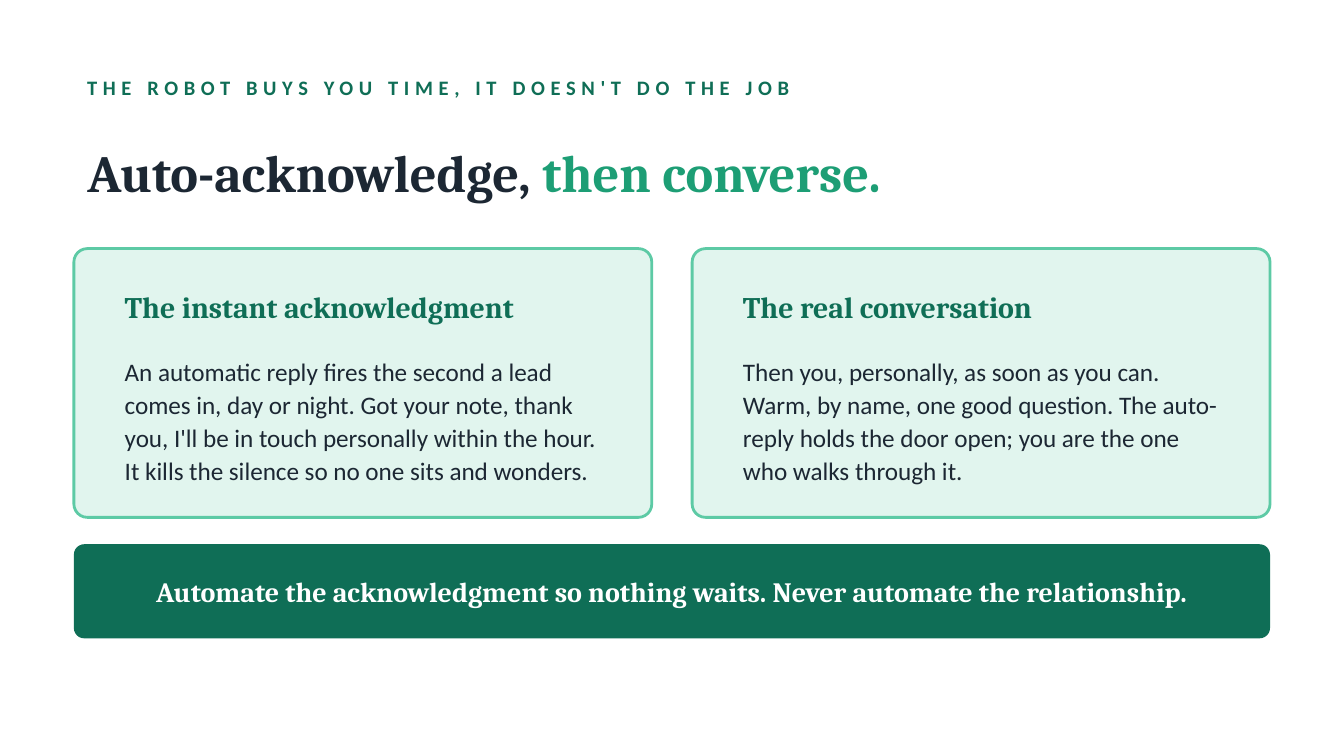
from pptx import Presentation
from pptx.dml.color import RGBColor
from pptx.enum.shapes import MSO_SHAPE
from pptx.enum.text import MSO_ANCHOR, MSO_AUTO_SIZE, PP_ALIGN
from pptx.util import Pt

PX = 4572  # 200 px to the inch
ROUND = MSO_SHAPE.ROUNDED_RECTANGLE
MIDDLE = MSO_ANCHOR.MIDDLE
FIXED = MSO_AUTO_SIZE.NONE
LEFT, CENTER = PP_ALIGN.LEFT, PP_ALIGN.CENTER
HEAD, BODY = "Cambria", "Calibri"
INK, DARK, GREEN = "1C2733", "0F6E56", "1D9E75"
MINT, EDGE, WHITE = "E1F5EE", "5DCAA5", "FFFFFF"


def color(code):
    return RGBColor.from_string(code)


def write(box, parts, font, size, bold=True, align=LEFT):
    """Fill a box with one paragraph of (text, colour) parts."""
    frame = box.text_frame
    frame.word_wrap = True
    frame.auto_size = FIXED
    frame.vertical_anchor = MIDDLE
    para = frame.paragraphs[0]
    para.alignment = align
    for text, code in parts:
        run = para.add_run()
        run.text = text
        run.font.name = font
        run.font.size = Pt(size)
        run.font.bold = bold
        run.font.color.rgb = color(code)
    return para


deck = Presentation()
deck.slide_width, deck.slide_height = 2000 * PX, 1125 * PX
slide = deck.slides.add_slide(deck.slide_layouts[5])
shapes = slide.shapes

# Kicker line
box = shapes.add_textbox(110 * PX, 100 * PX, 1780 * PX, 60 * PX)
para = write(box, [("THE ROBOT BUYS YOU TIME, IT DOESN'T DO THE JOB", DARK)],
             BODY, 11)
para.runs[0].font._element.set("spc", "300")

# Title
title = shapes.title
title.left, title.top = 110 * PX, 170 * PX
title.width, title.height = 1780 * PX, 170 * PX
write(title, [("Auto-acknowledge, ", INK), ("then converse.", GREEN)], HEAD, 28)

# Two cards
cards = [
    ("The instant acknowledgment",
     "An automatic reply fires the second a lead comes in, day or night. "
     "Got your note, thank you, I'll be in touch personally within the hour. "
     "It kills the silence so no one sits and wonders."),
    ("The real conversation",
     "Then you, personally, as soon as you can. Warm, by name, one good "
     "question. The auto-reply holds the door open; you are the one who "
     "walks through it."),
]
for i, (name, text) in enumerate(cards):
    left = 110 + i * 920
    card = shapes.add_shape(ROUND, left * PX, 370 * PX, 860 * PX, 400 * PX)
    card.adjustments[0] = 0.05
    card.shadow.inherit = False
    card.fill.solid()
    card.fill.fore_color.rgb = color(MINT)
    card.line.color.rgb = color(EDGE)
    card.line.width = Pt(1.5)

    box = shapes.add_textbox((left + 56) * PX, 406 * PX, 760 * PX, 100 * PX)
    write(box, [(name, DARK)], HEAD, 16)
    box = shapes.add_textbox((left + 56) * PX, 514 * PX, 760 * PX, 220 * PX)
    para = write(box, [(text, INK)], BODY, 13.5, bold=False)
    para.line_spacing = 1.1

# Closing banner
band = shapes.add_shape(ROUND, 110 * PX, 810 * PX, 1780 * PX, 140 * PX)
band.adjustments[0] = 0.11
band.shadow.inherit = False
band.fill.solid()
band.fill.fore_color.rgb = color(DARK)
band.line.fill.background()
box = shapes.add_textbox(160 * PX, 810 * PX, 1680 * PX, 140 * PX)
write(box, [("Automate the acknowledgment so nothing waits. "
             "Never automate the relationship.", WHITE)],
      HEAD, 15, align=CENTER)

deck.save("out.pptx")
